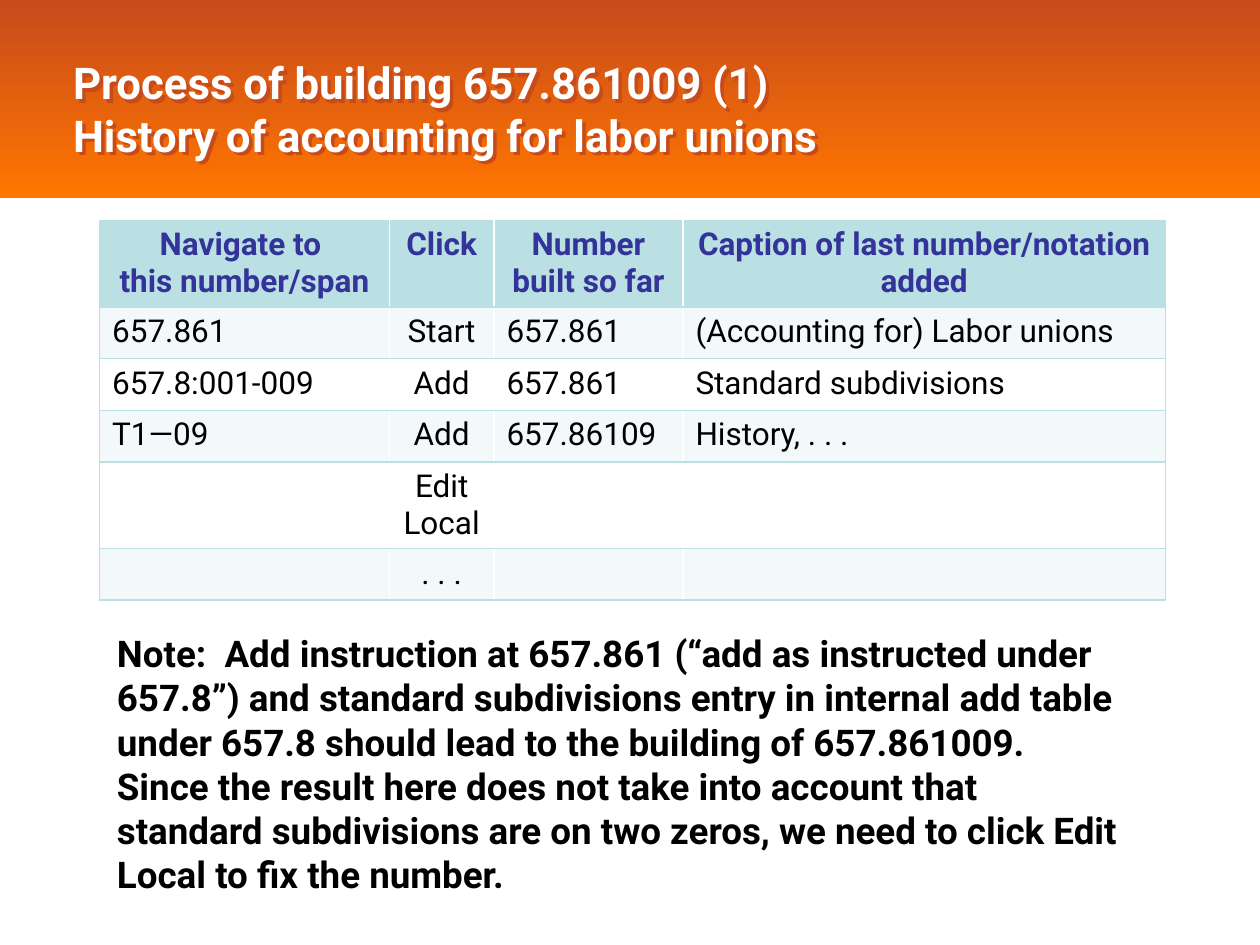
from lxml import etree
from pptx import Presentation
from pptx.dml.color import RGBColor
from pptx.enum.shapes import MSO_SHAPE
from pptx.enum.text import MSO_ANCHOR, MSO_AUTO_SIZE, PP_ALIGN
from pptx.oxml import parse_xml
from pptx.oxml.ns import nsdecls
from pptx.util import Inches, Pt

RECT = MSO_SHAPE.RECTANGLE
MIDDLE = MSO_ANCHOR.MIDDLE
NO_FIT = MSO_AUTO_SIZE.NONE
LEFT, CENTER = PP_ALIGN.LEFT, PP_ALIGN.CENTER
FONT = "Roboto"
TEAL, PALE, WHITE = "BBE0E3", "F3F9FA", "FFFFFF"
BURNT, ORANGE = "C74A1B", "FF7600"
INDIGO, BLACK = "333399", "000000"


def rgb(value):
    return RGBColor.from_string(value)


def style(tf, size, color, bold, align):
    for p in tf.paragraphs:
        p.alignment = align
        for r in p.runs:
            r.font.name = FONT
            r.font.size = Pt(size)
            r.font.bold = bold
            r.font.color.rgb = rgb(color)


prs = Presentation()
prs.slide_width, prs.slide_height = Inches(10), Inches(7.5)
W, H = prs.slide_width, prs.slide_height
s = prs.slides.add_slide(prs.slide_layouts[5])

band = s.shapes.add_shape(RECT, 0, 0, W, int(H * 0.21))
band.shadow.inherit = False
band.line.fill.background()
band.fill.gradient()
band.fill.gradient_angle = 270
for stop, color, position in zip(band.fill.gradient_stops, (BURNT, ORANGE), (0, 1)):
    stop.color.rgb = rgb(color)
    stop.position = position
s.shapes._spTree.insert(2, band._element)

title = s.shapes.title
title.left, title.top = Inches(0.48), Inches(0.16)
title.width, title.height = Inches(7.64), Inches(1.4)
tf = title.text_frame
tf.text = "Process of building 657.861009 (1)\vHistory of accounting for labor unions"
tf.word_wrap = True
tf.auto_size = NO_FIT
tf.vertical_anchor = MIDDLE
style(tf, 25, WHITE, True, LEFT)
title._element.spPr.append(parse_xml(
    f'<a:effectLst {nsdecls("a")}><a:outerShdw dist="35921" dir="2700000">'
    f'<a:srgbClr val="{BURNT}"/></a:outerShdw></a:effectLst>'))

rows = [
    ("Navigate to \nthis number/span", "Click", "Number built so far",
     "Caption of last number/notation added"),
    ("657.861", "Start", "657.861", "(Accounting for) Labor unions"),
    ("657.8:001-009", "Add", "657.861", "Standard subdivisions"),
    ("T1—09", "Add", "657.86109", "History, . . ."),
    ("", "Edit Local", "", ""),
    ("", ". . .", "", ""),
]
widths = (2.3, 0.83, 1.5, 3.83)
line_height = 0.41
table = s.shapes.add_table(len(rows), len(widths), Inches(0.79), Inches(1.75),
                           Inches(sum(widths)), Inches(line_height * len(rows))).table
for column, width in zip(table.columns, widths):
    column.width = Inches(width)
for i, row in enumerate(rows):
    table.rows[i].height = Inches(line_height)
    for j, text in enumerate(row):
        cell = table.cell(i, j)
        cell.text = text
        header = i == 0
        style(cell.text_frame, 18, INDIGO if header else BLACK, header,
              CENTER if header or j == 1 else LEFT)
        edges = ["lnT", "lnB"]
        if j == 0:
            edges.insert(0, "lnL")
        if j == len(widths) - 1:
            edges.insert(0, "lnR")
        tcPr = cell._tc.get_or_add_tcPr()
        for edge in edges:
            tcPr.append(etree.fromstring(
                f'<a:{edge} {nsdecls("a")} w="12700"><a:solidFill>'
                f'<a:srgbClr val="{TEAL}"/></a:solidFill></a:{edge}>'))
        cell.fill.solid()
        cell.fill.fore_color.rgb = rgb(TEAL if header else PALE if i % 2 else WHITE)

note = s.shapes.add_textbox(Inches(0.83), Inches(4.96), Inches(8.17), Inches(2.22))
tf = note.text_frame
tf.word_wrap = True
tf.text = (
    "Note:  Add instruction at 657.861 (“add as instructed under 657.8”) and standard "
    "subdivisions entry in internal add table under 657.8 should lead to the building of "
    "657.861009.  Since the result here does not take into account that standard "
    "subdivisions are on two zeros, we need to click Edit Local to fix the number.")
style(tf, 21, BLACK, True, LEFT)

prs.save("out.pptx")
